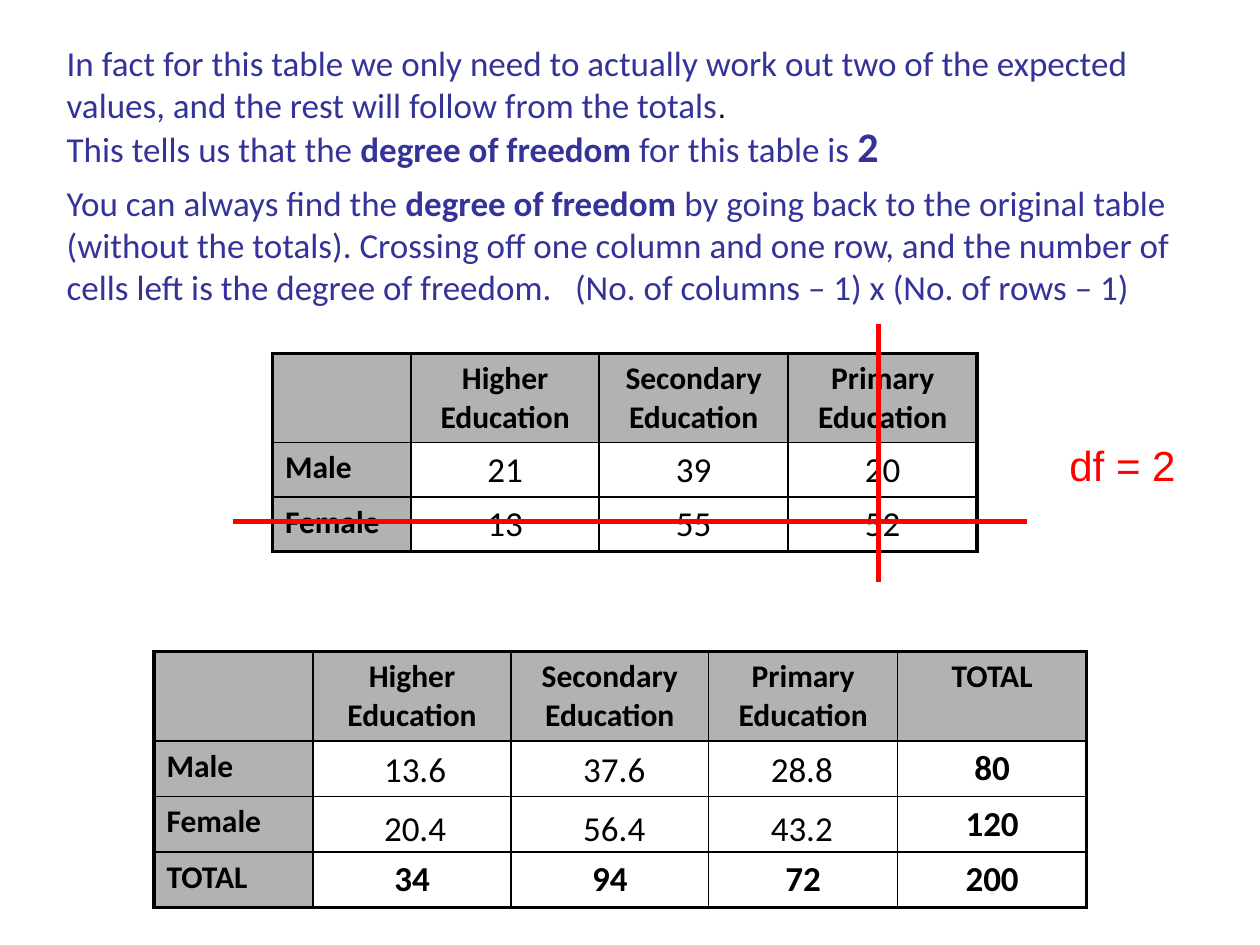
"""Build a slide explaining degrees of freedom with two contingency tables."""
from lxml import etree
from pptx import Presentation
from pptx import util as u
from pptx.dml.color import RGBColor
from pptx.enum import shapes, text
from pptx.oxml import ns

BLACK, NAVY, RED, GREY = "000000", "333399", "FF0000", "B2B2B2"

prs = Presentation()
prs.slide_width, prs.slide_height = u.Pt(720), u.Pt(540)
s = prs.slides.add_slide(prs.slide_layouts[6])


def add_text(box, runs):
    tf = s.shapes.add_textbox(*[u.Pt(v) for v in box]).text_frame
    tf.word_wrap = True
    for content, size, bold, color, face in runs:
        r = tf.paragraphs[0].add_run()
        r.text = content
        r.font.size, r.font.bold, r.font.name = u.Pt(size), bold, face
        r.font.color.rgb = RGBColor.from_string(color)


def add_grid(left, top, widths, heights, rows, bold_values):
    table = s.shapes.add_table(len(rows), len(widths), u.Pt(left), u.Pt(top),
                               u.Pt(sum(widths)), u.Pt(sum(heights))).table
    table.first_row = table.horz_banding = False
    for column, width in zip(table.columns, widths):
        column.width = u.Pt(width)
    for row, height in zip(table.rows, heights):
        row.height = u.Pt(height)
    last_row, last_col = len(rows) - 1, len(widths) - 1
    for i, row in enumerate(rows):
        for j, content in enumerate(row):
            cell = table.cell(i, j)
            header = i == 0 or j == 0
            edges = {"lnL": j == 0, "lnR": j == last_col, "lnT": i == 0, "lnB": i == last_row}
            for tag, outer in edges.items():
                ln = etree.SubElement(cell._tc.get_or_add_tcPr(), ns.qn("a:" + tag),
                                      w=str(u.Pt(2.25 if outer else 1)))
                fill = etree.SubElement(ln, ns.qn("a:solidFill"))
                etree.SubElement(fill, ns.qn("a:srgbClr"), val=BLACK)
            if header:
                cell.fill.solid()
                cell.fill.fore_color.rgb = RGBColor.from_string(GREY)
            else:
                cell.fill.background()
            cell.text_frame.text = content
            p = cell.text_frame.paragraphs[0]
            p.alignment = text.PP_ALIGN.LEFT if j == 0 else text.PP_ALIGN.CENTER
            p.font.size = u.Pt(18 if header else 20)
            p.font.bold, p.font.name = header or bold_values, "Calibri"
            p.font.color.rgb = RGBColor.from_string(BLACK)


headings = ["", "Higher Education", "Secondary Education", "Primary Education"]
add_grid(88, 372.2, [91, 113, 113, 108, 108], [51, 31.7, 31.7, 31.7],
         [headings + ["TOTAL"],
          ["Male", "", "", "", "80"],
          ["Female", "", "", "", "120"],
          ["TOTAL", "34", "94", "72", "200"]], True)

expected = [["13.6", "37.6", "28.8"], ["20.4", "56.4", "43.2"]]
for top, values in zip([423.4, 457.2], expected):
    for left, value in zip([212.4, 326.2, 433.4], values):
        add_text((left, top, 102, 31), [(value, 20, False, BLACK, "Calibri")])

add_text((31, 20, 652, 55.5), [
    ("In fact for this table we only need to actually work out two of the expected values, "
     "and the rest will follow from the totals", 20, False, NAVY, "Calibri"),
    (".", 18, False, BLACK, "Arial")])
add_text((31, 65.5, 652, 36), [
    ("This tells us that the", 20, False, NAVY, "Calibri"),
    (" degree of freedom", 20, True, NAVY, "Calibri"),
    (" for this table is ", 20, False, NAVY, "Calibri"),
    ("2", 24, True, NAVY, "Calibri")])
add_text((31, 100, 652, 79), [
    ("You can always find the", 20, False, NAVY, "Calibri"),
    (" degree of freedom", 20, True, NAVY, "Calibri"),
    (" by going back to the original table (without the totals). Crossing off one column "
     "and one row, and the number of cells left is the degree of freedom.   "
     "(No. of columns – 1) x (No. of rows – 1)", 20, False, NAVY, "Calibri")])

add_grid(155.7, 202, [79.2, 107.5, 108, 108], [50.8, 31, 31],
         [headings, ["Male", "21", "39", "20"], ["Female", "13", "55", "52"]], False)

for ends in [(133.2, 298.2, 586.8, 298.2), (501.8, 185, 501.8, 332.4)]:
    line = s.shapes.add_connector(shapes.MSO_CONNECTOR.STRAIGHT, *[u.Pt(v) for v in ends])
    line.line.width = u.Pt(3)
    line.line.color.rgb = RGBColor.from_string(RED)
    etree.SubElement(line._element.spPr, ns.qn("a:effectLst"))

add_text((604, 247.7, 85, 36), [("df = 2", 24, False, RED, "Arial")])

prs.save("out.pptx")
